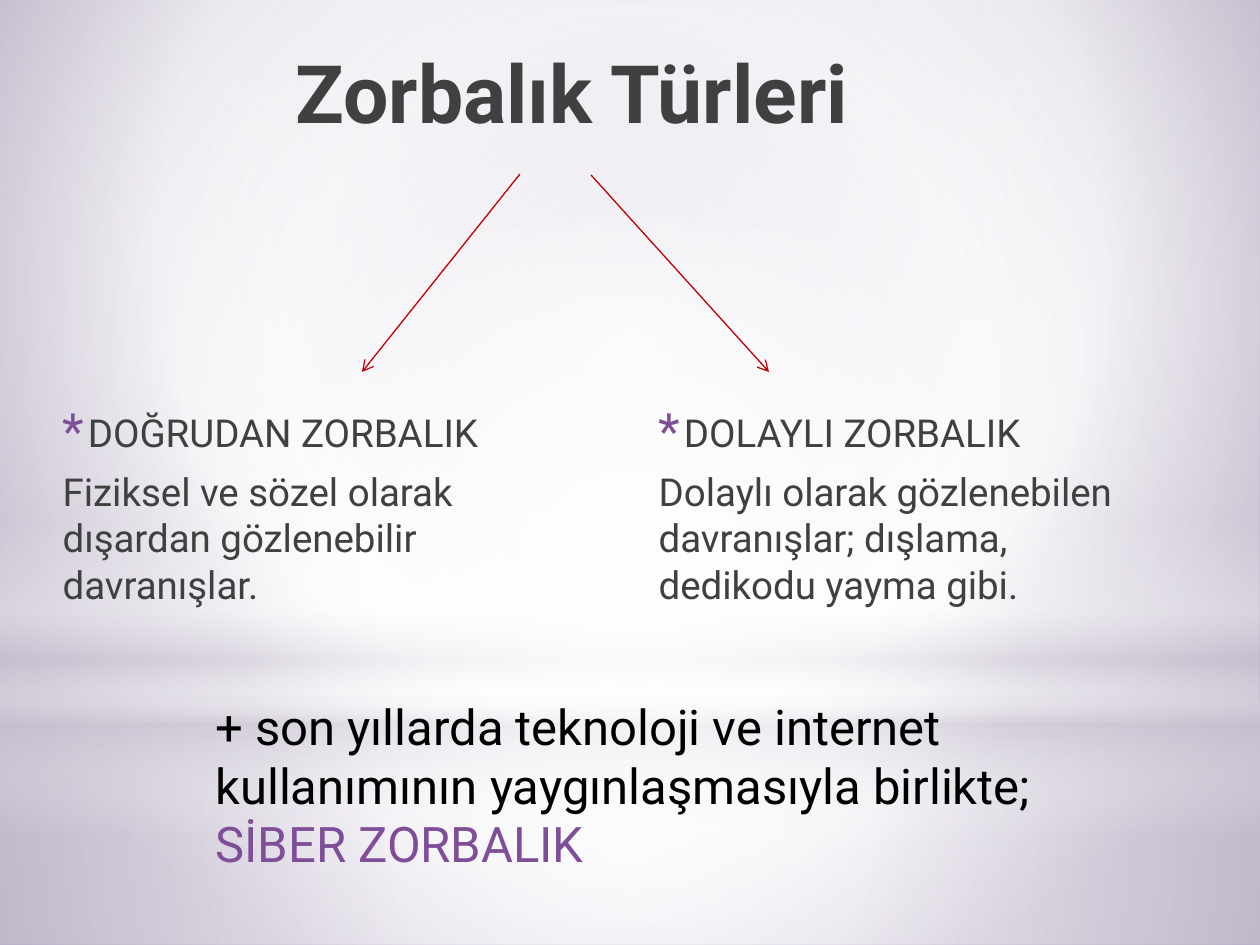
from lxml import etree
from pptx import Presentation
from pptx import util as u
from pptx.dml.color import RGBColor
from pptx.enum import shapes, text
from pptx.oxml.ns import qn

COLORS = {
    "white": "FFFFFF", "black": "000000", "ink": "404040", "accent": "7E4E99",
    "arrow": "C00000", "haze": "C9C2D1", "bg_inner": "C1B7CD", "bg_outer": "A191B5",
}
FONT = "Roboto"
PX = 914400 / 126
CENTER = (50, 50, 50, 50)


def px(*values):
    return [u.Emu(round(v * PX)) for v in values]


def sub(parent, tag, **attrs):
    return etree.SubElement(parent, qn(tag), {k: str(v) for k, v in attrs.items()})


def set_gradient(fill, holder, stops, focus=None):
    """Fill holder with (position, colour, opacity) stops, circular around focus or vertical."""
    fill.solid()
    solid = holder.find(qn("a:solidFill"))
    grad = etree.Element(qn("a:gradFill"), rotWithShape="1")
    stop_list = sub(grad, "a:gsLst")
    for pos, color, opacity in stops:
        gs = sub(stop_list, "a:gs", pos=pos * 1000)
        clr = sub(gs, "a:srgbClr", val=COLORS[color])
        if opacity < 100:
            sub(clr, "a:alpha", val=opacity * 1000)
    if focus:
        path = sub(grad, "a:path", path="circle")
        sub(path, "a:fillToRect", **{side: v * 1000 for side, v in zip("ltrb", focus)})
    else:
        sub(grad, "a:lin", ang=5400000, scaled=0)
    holder.replace(solid, grad)


class SlideBuilder:
    def __init__(self, prs):
        self.s = prs.slides.add_slide(prs.slide_layouts[5])

    def background(self, stops, focus):
        fill = self.s.background.fill
        fill.solid()
        set_gradient(fill, self.s.element.find(".//" + qn("p:bgPr")), stops, focus)

    def glow(self, kind, box, stops, focus=None):
        sp = self.s.shapes.add_shape(kind, *px(*box))
        sp.shadow.inherit = False
        sp.line.fill.background()
        set_gradient(sp.fill, sp.element.spPr, stops, focus)

    def format_run(self, r, size, color, bold=False):
        r.font.name, r.font.size, r.font.bold = FONT, u.Pt(size), bold
        r.font.color.rgb = RGBColor.from_string(COLORS[color])

    def title(self, box, words):
        sp = self.s.shapes.title
        self.s.shapes.element.append(sp.element)  # bring in front of the glows
        sp.left, sp.top, sp.width, sp.height = px(*box)
        tf = sp.text_frame
        tf.text = words
        tf.auto_size = text.MSO_AUTO_SIZE.NONE
        tf.vertical_anchor = text.MSO_ANCHOR.TOP
        p = tf.paragraphs[0]
        p.alignment = text.PP_ALIGN.CENTER
        self.format_run(p.runs[0], 46, "ink", bold=True)

    def text_box(self, box):
        tf = self.s.shapes.add_textbox(*px(*box)).text_frame
        tf.word_wrap = True
        return tf

    def bullet(self, p):
        pPr = p._p.get_or_add_pPr()
        sub(sub(pPr, "a:buClr"), "a:srgbClr", val=COLORS["accent"])
        sub(pPr, "a:buSzPct", val=130000)
        sub(pPr, "a:buFont", typeface=FONT)
        sub(pPr, "a:buChar", char="*")

    def type_column(self, box, heading, description):
        tf = self.text_box(box)
        tf.text = f"{heading}\n{description}"
        for p, (margin, indent) in zip(tf.paragraphs, [(0.25, -0.2), (0.05, 0)]):
            p.space_before, p.space_after = u.Pt(4.4), u.Pt(3)
            pPr = p._p.get_or_add_pPr()
            pPr.set("marL", str(u.Inches(margin)))
            pPr.set("indent", str(u.Inches(indent)))
            self.format_run(p.runs[0], 22, "ink")
        self.bullet(tf.paragraphs[0])

    def note(self, box, parts):
        tf = self.text_box(box)
        tf.auto_size = text.MSO_AUTO_SIZE.SHAPE_TO_FIT_TEXT
        for words, color in parts:
            r = tf.paragraphs[0].add_run()
            r.text = words
            self.format_run(r, 28, color)

    def arrow(self, start, end):
        cn = self.s.shapes.add_connector(shapes.MSO_CONNECTOR.STRAIGHT, *px(*start, *end))
        cn.line.width = u.Pt(0.75)
        cn.line.color.rgb = RGBColor.from_string(COLORS["arrow"])
        sub(cn.line._get_or_add_ln(), "a:tailEnd", type="arrow")
        sub(cn.element.spPr, "a:effectLst")


def main():
    prs = Presentation()
    prs.slide_width, prs.slide_height = px(1260, 945)
    rect, oval = shapes.MSO_SHAPE.RECTANGLE, shapes.MSO_SHAPE.OVAL

    b = SlideBuilder(prs)
    b.background([(0, "bg_inner", 100), (60, "white", 100), (100, "bg_outer", 100)],
                 (20, 10, 20, 60))
    b.glow(rect, (0, 703, 1260, 242),
           [(0, "white", 91), (37, "white", 76), (100, "haze", 79)], CENTER)
    b.glow(rect, (0, 0, 1260, 703),
           [(0, "white", 89), (48, "white", 62), (100, "haze", 79)], CENTER)
    b.glow(rect, (0, 519, 1260, 315),
           [(0, "white", 0), (29, "white", 30), (45, "haze", 40),
            (55, "white", 26), (65, "haze", 60), (100, "white", 0)])
    b.glow(oval, (0, 220, 1260, 703), [(0, "white", 100), (56, "white", 0)], CENTER)

    b.title((123, 37, 897, 157), "Zorbalık Türleri")
    b.arrow((591, 175), (769, 372))
    b.arrow((520, 174), (362, 372))
    columns = [
        (44, "DOĞRUDAN ZORBALIK",
         "Fiziksel ve sözel olarak dışardan gözlenebilir davranışlar."),
        (640, "DOLAYLI ZORBALIK",
         "Dolaylı olarak gözlenebilen davranışlar; dışlama, dedikodu yayma gibi."),
    ]
    for left, heading, description in columns:
        b.type_column((left, 403, 515, 479), heading, description)
    b.note((203, 690, 912, 190), [
        ("+ son yıllarda teknoloji ve internet kullanımının yaygınlaşmasıyla birlikte; ", "black"),
        ("SİBER ZORBALIK", "accent"),
    ])
    prs.save("out.pptx")


if __name__ == "__main__":
    main()
